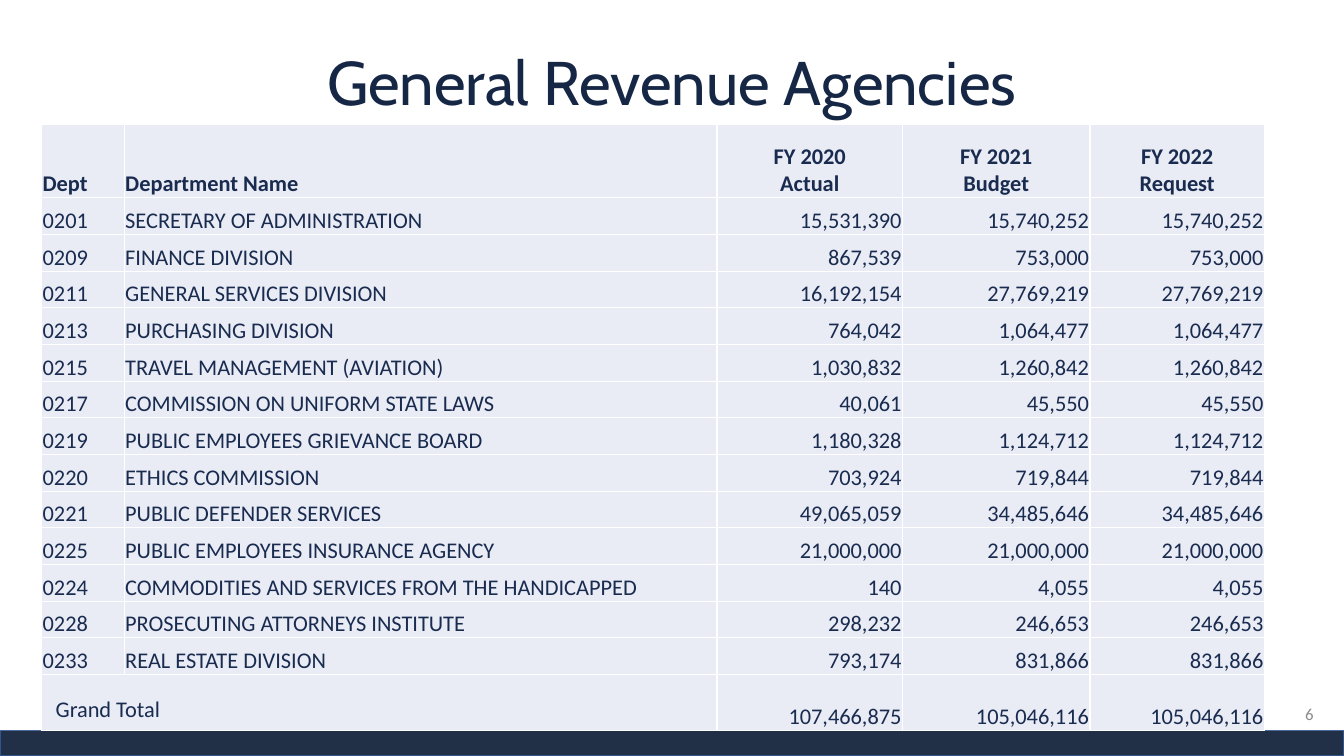
import dataclasses

import lxml.etree
import pptx
import pptx.dml.color
import pptx.enum.shapes
import pptx.enum.text
import pptx.oxml.ns
import pptx.util

Pt = pptx.util.Pt
ALIGN = pptx.enum.text.PP_ALIGN
ANCHOR = pptx.enum.text.MSO_ANCHOR


@dataclasses.dataclass(frozen=True)
class Theme:
    title_font: str = "Cabin"
    body_font: str = "Calibri"
    title_size: float = 44
    table_size: float = 16
    number_size: float = 12
    title_color: str = "162746"
    table_color: str = "192C4F"
    number_color: str = "8C8C8C"
    cell_fill: str = "E9EBF5"
    white: str = "FFFFFF"
    bar_fill: str = "212F47"
    bar_line: str = "325491"


THEME = Theme()

HEADERS = ["Dept", "Department Name", "FY 2020\nActual", "FY 2021\nBudget", "FY 2022\nRequest"]
DEPARTMENTS = [
    ("0201", "SECRETARY OF ADMINISTRATION", 15531390, 15740252, 15740252),
    ("0209", "FINANCE DIVISION", 867539, 753000, 753000),
    ("0211", "GENERAL SERVICES DIVISION", 16192154, 27769219, 27769219),
    ("0213", "PURCHASING DIVISION", 764042, 1064477, 1064477),
    ("0215", "TRAVEL MANAGEMENT (AVIATION)", 1030832, 1260842, 1260842),
    ("0217", "COMMISSION ON UNIFORM STATE LAWS", 40061, 45550, 45550),
    ("0219", "PUBLIC EMPLOYEES GRIEVANCE BOARD", 1180328, 1124712, 1124712),
    ("0220", "ETHICS COMMISSION", 703924, 719844, 719844),
    ("0221", "PUBLIC DEFENDER SERVICES", 49065059, 34485646, 34485646),
    ("0225", "PUBLIC EMPLOYEES INSURANCE AGENCY", 21000000, 21000000, 21000000),
    ("0224", "COMMODITIES AND SERVICES FROM THE HANDICAPPED", 140, 4055, 4055),
    ("0228", "PROSECUTING ATTORNEYS INSTITUTE", 298232, 246653, 246653),
    ("0233", "REAL ESTATE DIVISION", 793174, 831866, 831866),
]
COLUMN_WIDTHS = [59, 423.4, 132.5, 133.9, 124.6]
HEADER_HEIGHT, ROW_HEIGHT, TOTAL_HEIGHT = 52.5, 26.2, 39.8


def rgb(color):
    return pptx.dml.color.RGBColor.from_string(color)


def format_text(text_frame, font_name, size, color, alignment, bold=False):
    for paragraph in text_frame.paragraphs:
        paragraph.alignment = alignment
        for run in paragraph.runs:
            run.font.name = font_name
            run.font.size = Pt(size)
            run.font.bold = bold
            run.font.color.rgb = rgb(color)


def set_title(slide, text):
    title = slide.shapes.title
    title.left, title.top, title.width, title.height = Pt(66), Pt(9), Pt(828), Pt(104.4)
    title.text_frame.text = text
    title.text_frame.vertical_anchor = ANCHOR.MIDDLE
    title.text_frame.paragraphs[0].line_spacing = 0.9
    format_text(title.text_frame, THEME.title_font, THEME.title_size, THEME.title_color, ALIGN.CENTER)


def add_bar(slide, top, height, fill, line=None):
    bar = slide.shapes.add_shape(
        pptx.enum.shapes.MSO_SHAPE.RECTANGLE, Pt(0), Pt(top), Pt(960), Pt(height)
    )
    bar.shadow.inherit = False
    bar.fill.solid()
    bar.fill.fore_color.rgb = rgb(fill)
    if line:
        bar.line.color.rgb = rgb(line)
        bar.line.width = Pt(1)
    else:
        bar.line.fill.background()


def add_borders(cell):
    properties = cell._tc.get_or_add_tcPr()
    for side in ("a:lnL", "a:lnR", "a:lnT", "a:lnB"):
        line = lxml.etree.SubElement(properties, pptx.oxml.ns.qn(side), w=str(Pt(1)))
        fill = lxml.etree.SubElement(line, pptx.oxml.ns.qn("a:solidFill"))
        lxml.etree.SubElement(fill, pptx.oxml.ns.qn("a:srgbClr"), val=THEME.white)


def fill_cell(cell, text, alignment, bold):
    add_borders(cell)
    cell.fill.solid()
    cell.fill.fore_color.rgb = rgb(THEME.cell_fill)
    cell.vertical_anchor = ANCHOR.BOTTOM
    cell.margin_left = cell.margin_right = cell.margin_top = Pt(0.7)
    cell.margin_bottom = Pt(0)
    cell.text_frame.text = text
    format_text(
        cell.text_frame, THEME.body_font, THEME.table_size, THEME.table_color, alignment, bold
    )


def add_budget_table(slide):
    totals = [sum(amounts) for amounts in list(zip(*DEPARTMENTS))[2:]]
    rows = [HEADERS, *DEPARTMENTS, ("Grand Total", "", *totals)]
    heights = [HEADER_HEIGHT, *[ROW_HEIGHT] * len(DEPARTMENTS), TOTAL_HEIGHT]
    frame = slide.shapes.add_table(
        len(rows), len(HEADERS), Pt(29.8), Pt(88.8), Pt(sum(COLUMN_WIDTHS)), Pt(sum(heights))
    )
    table = frame.table
    table.first_row = False
    table.horz_banding = False
    for column, width in zip(table.columns, COLUMN_WIDTHS):
        column.width = Pt(width)
    for row_index, values in enumerate(rows):
        table.rows[row_index].height = Pt(heights[row_index])
        is_header = row_index == 0
        for column_index, value in enumerate(values):
            text = value if isinstance(value, str) else f"{value:,}"
            if column_index < 2:
                alignment = ALIGN.LEFT
            else:
                alignment = ALIGN.CENTER if is_header else ALIGN.RIGHT
            fill_cell(table.cell(row_index, column_index), text, alignment, is_header)
    total_label = table.cell(len(rows) - 1, 0)
    total_label.merge(table.cell(len(rows) - 1, 1))
    total_label.margin_left = total_label.margin_right = Pt(10)
    total_label.margin_top = total_label.margin_bottom = Pt(5)


def add_slide_number(slide, text):
    box = slide.shapes.add_textbox(Pt(678.2), Pt(495.4), Pt(267.2), Pt(28.8))
    box.text_frame.word_wrap = True
    box.text_frame.vertical_anchor = ANCHOR.MIDDLE
    box.text_frame.text = text
    format_text(
        box.text_frame, THEME.body_font, THEME.number_size, THEME.number_color, ALIGN.RIGHT
    )


def main():
    presentation = pptx.Presentation()
    presentation.slide_width, presentation.slide_height = Pt(960), Pt(540)
    slide = presentation.slides.add_slide(presentation.slide_layouts[5])
    set_title(slide, "General Revenue Agencies")
    add_bar(slide, 521.6, 18, THEME.bar_fill, THEME.bar_line)
    add_bar(slide, 518, 3.6, THEME.white)
    add_budget_table(slide)
    add_slide_number(slide, "6")
    presentation.save("out.pptx")


if __name__ == "__main__":
    main()
